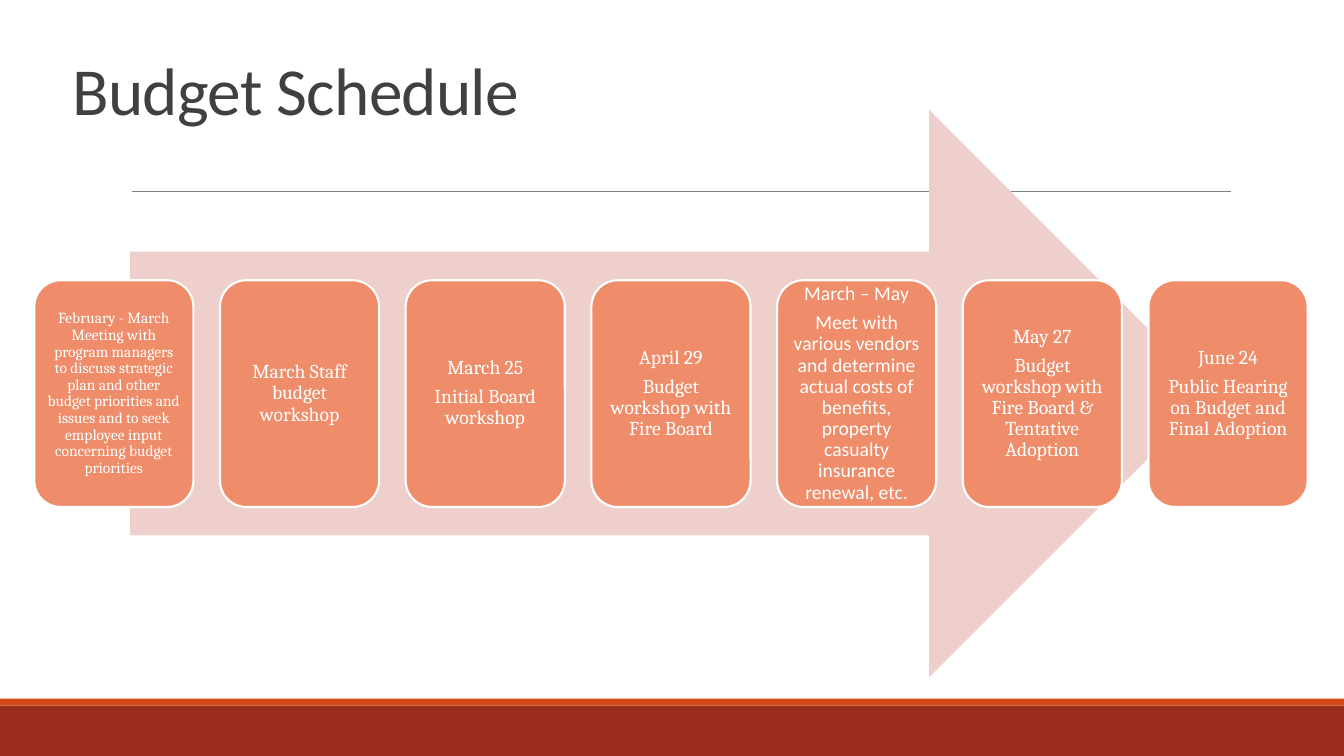
from dataclasses import dataclass

from lxml import etree
from pptx import Presentation
from pptx import util as u
from pptx.dml.color import RGBColor
from pptx.enum import shapes, text
from pptx.oxml.ns import qn


@dataclass(frozen=True)
class Theme:
    heading: str = "Calibri"
    body: str = "Cambria"
    ink: str = "404040"
    paper: str = "FFFFFF"
    rule: str = "808080"
    arrow: str = "EFCFCC"
    card: str = "EF8C6A"
    band: str = "9B2D1F"
    stripe: str = "D34817"
    title_size: float = 48
    card_size: float = 14
    dense_size: float = 11


THEME = Theme()
WIDTH, HEIGHT = 13.33, 7.5

# Each step: font, size, paragraphs
STEPS = [
    (THEME.body, THEME.dense_size, [
        "February - March Meeting with program managers to discuss strategic "
        "plan and other budget priorities and issues and to seek employee "
        "input concerning budget priorities"]),
    (THEME.body, THEME.card_size, ["March Staff budget workshop"]),
    (THEME.body, THEME.card_size, ["March 25", "Initial Board workshop"]),
    (THEME.body, THEME.card_size, ["April 29", "Budget workshop with Fire Board"]),
    (THEME.heading, THEME.card_size, [
        "March – May",
        "Meet with various vendors and determine actual costs of benefits, "
        "property casualty insurance renewal, etc."]),
    (THEME.body, THEME.card_size, [
        "May 27", "Budget workshop with Fire Board & Tentative Adoption"]),
    (THEME.body, THEME.card_size, [
        "June 24", "Public Hearing on Budget and Final Adoption"]),
]


def apply(target, **values):
    for name, value in values.items():
        setattr(target, name, value)


def format_font(font, name, size, color):
    apply(font, name=name, size=u.Pt(size))
    font.color.rgb = RGBColor.from_string(color)


def add_block(page, kind, box, fill, line=None):
    block = page.shapes.add_shape(kind, *map(u.Inches, box))
    block.shadow.inherit = False
    block.fill.solid()
    block.fill.fore_color.rgb = RGBColor.from_string(fill)
    if line:
        block.line.color.rgb = RGBColor.from_string(line)
        block.line.width = u.Pt(1.5)
    else:
        block.line.fill.background()
    return block


def add_footer(page, box):
    """Stack a thin stripe on a dark band."""
    left, top, width, height = box
    stripe = height / 8
    rectangle = shapes.MSO_SHAPE.RECTANGLE
    add_block(page, rectangle, (left, top + stripe, width, height - stripe), THEME.band)
    add_block(page, rectangle, (left, top, width, stripe), THEME.stripe)


def add_rule(page, left, top, width):
    ends = map(u.Inches, (left, top, left + width, top))
    rule = page.shapes.add_connector(shapes.MSO_CONNECTOR.STRAIGHT, *ends)
    rule.line.color.rgb = RGBColor.from_string(THEME.rule)
    rule.line.width = u.Pt(0.5)
    etree.SubElement(rule._element.spPr, qn("a:effectLst"))


def set_title(page, box, words):
    title = page.shapes.title
    left, top, width, height = map(u.Inches, box)
    apply(title, left=left, top=top, width=width, height=height)
    frame = title.text_frame
    apply(frame, text=words, word_wrap=True, auto_size=text.MSO_AUTO_SIZE.NONE,
          vertical_anchor=text.MSO_ANCHOR.BOTTOM)
    para = frame.paragraphs[0]
    apply(para, alignment=text.PP_ALIGN.LEFT, line_spacing=0.85)
    span = para.runs[0]
    format_font(span.font, THEME.heading, THEME.title_size, THEME.ink)
    span._r.get_or_add_rPr().set("spc", "-50")


def add_card(page, box, font, size, lines):
    card = add_block(page, shapes.MSO_SHAPE.ROUNDED_RECTANGLE, box, THEME.card, THEME.paper)
    frame = card.text_frame
    inset = u.Inches(0.05)
    apply(frame, text="\n".join(lines), word_wrap=True,
          vertical_anchor=text.MSO_ANCHOR.MIDDLE, margin_left=inset,
          margin_right=inset, margin_top=inset, margin_bottom=inset)
    for para in frame.paragraphs:
        apply(para, alignment=text.PP_ALIGN.CENTER, line_spacing=0.9)
        format_font(para.runs[0].font, font, size, THEME.paper)
    for para in frame.paragraphs[:-1]:
        para.space_after = u.Pt(5.5)


def add_timeline(page, box, steps):
    """Spread equal cards across the box, each gap a sixth of a card."""
    left, top, width, height = box
    gap_share = 1 / 6
    card_width = width / (len(steps) + gap_share * (len(steps) - 1))
    pitch = card_width * (1 + gap_share)
    for column, (font, size, lines) in enumerate(steps):
        add_card(page, (left + column * pitch, top, card_width, height), font, size, lines)


def build_schedule(deck):
    page = deck.slides.add_slide(deck.slide_layouts[5])
    add_footer(page, (0, 6.93, WIDTH, HEIGHT - 6.93))
    add_rule(page, 1.31, 1.9, 10.9)
    set_title(page, (0.62, 0.22, 11, 1.11), "Budget Schedule")
    add_block(page, shapes.MSO_SHAPE.RIGHT_ARROW, (1.29, 1.09, 10.74, 5.63), THEME.arrow)
    add_timeline(page, (0.34, 2.78, 12.63, 2.25), STEPS)


def main():
    deck = Presentation()
    apply(deck, slide_width=u.Inches(WIDTH), slide_height=u.Inches(HEIGHT))
    build_schedule(deck)
    deck.save("out.pptx")


if __name__ == "__main__":
    main()
